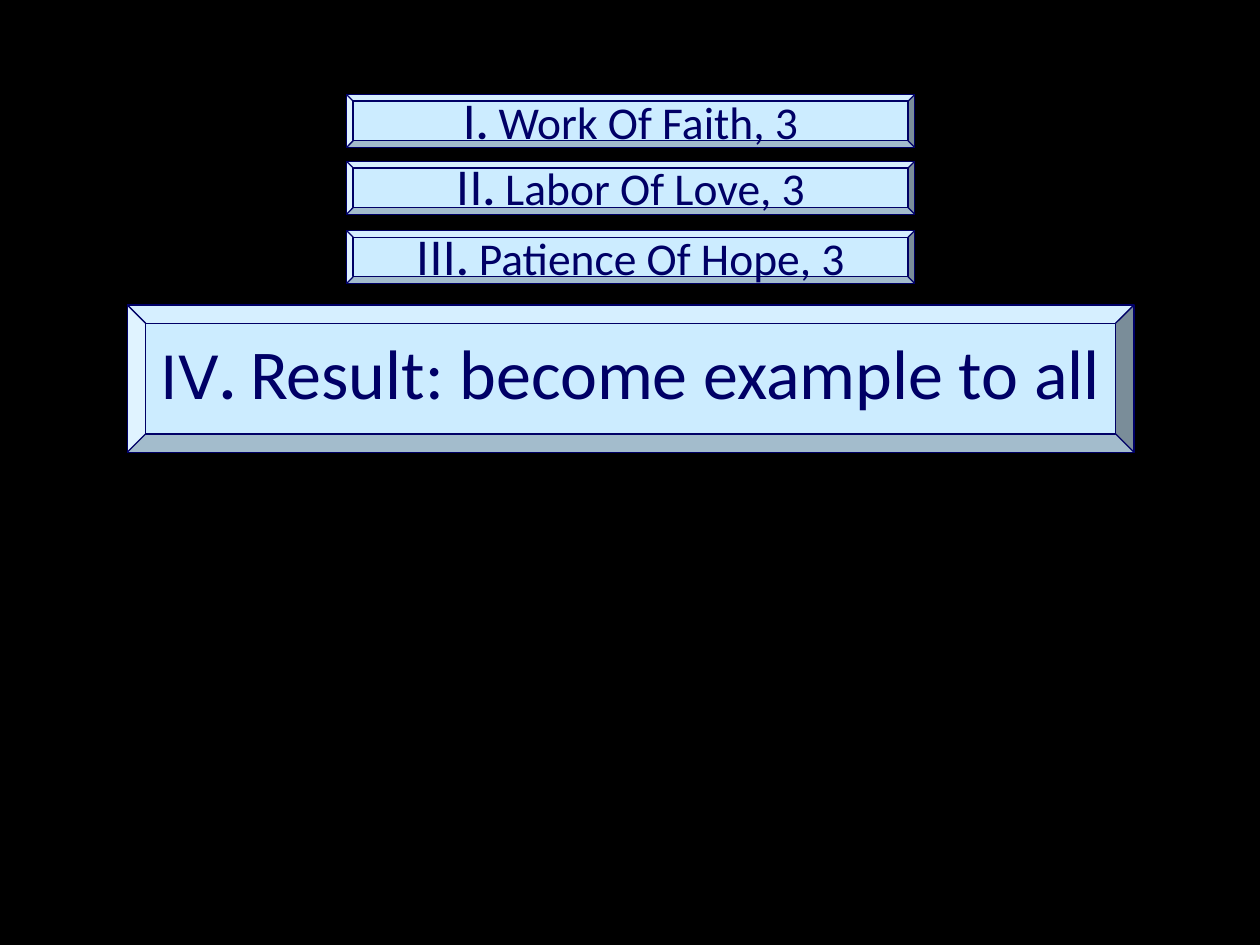
from dataclasses import dataclass

from pptx import Presentation, util as u
from pptx.dml.color import RGBColor
from pptx.enum import shapes, text


@dataclass(frozen=True)
class Theme:
    background: str = "000000"
    panel: str = "CCECFF"
    ink: str = "000066"
    numeral_font: str = "DejaVu Sans"
    body_font: str = "Calibri"
    line_width: float = 0.75
    point_sizes: tuple = (26, 26, 26)  # numeral, dot, wording
    result_sizes: tuple = (34, 36, 40)


def add_run(paragraph, words, *, font, size, color, bold=None):
    run = paragraph.add_run()
    run.text = words
    run.font.name = font
    run.font.size = u.Pt(size)
    run.font.bold = bold
    run.font.color.rgb = RGBColor.from_string(color)


class OutlineSlide:
    def __init__(self, deck, theme):
        self.theme = theme
        self.slide = deck.slides.add_slide(deck.slide_layouts[6])
        backdrop = self.slide.background.fill
        backdrop.solid()
        backdrop.fore_color.rgb = RGBColor.from_string(theme.background)

    def bevel(self, box, numeral, wording, sizes, anchor):
        """Add a bevelled bar with a numbered heading."""
        theme = self.theme
        bar = self.slide.shapes.add_shape(
            shapes.MSO_SHAPE.BEVEL, *map(u.Inches, box))
        bar.adjustments[0] = 0.125
        bar.shadow.inherit = False
        bar.fill.solid()
        bar.fill.fore_color.rgb = RGBColor.from_string(theme.panel)
        bar.line.color.rgb = RGBColor.from_string(theme.ink)
        bar.line.width = u.Pt(theme.line_width)

        frame = bar.text_frame
        frame.word_wrap = False
        frame.vertical_anchor = anchor
        heading = frame.paragraphs[0]
        heading.alignment = text.PP_ALIGN.CENTER
        numeral_size, dot_size, wording_size = sizes
        add_run(heading, numeral, font=theme.numeral_font,
                size=numeral_size, color=theme.ink)
        add_run(heading, ". ", font=theme.body_font,
                size=dot_size, color=theme.ink, bold=True)
        add_run(heading, wording, font=theme.body_font,
                size=wording_size, color=theme.ink, bold=False)


def main():
    deck = Presentation()
    deck.slide_width, deck.slide_height = u.Inches(10), u.Inches(7.5)
    theme = Theme()
    outline = OutlineSlide(deck, theme)

    # Points already covered
    points = [
        (0.75, "I", "Work Of Faith, 3"),
        (1.28, "II", "Labor Of Love, 3"),
        (1.83, "III", "Patience Of Hope, 3"),
    ]
    for top, numeral, wording in points:
        outline.bevel((2.75, top, 4.51, 0.42), numeral, wording,
                      theme.point_sizes, text.MSO_ANCHOR.MIDDLE)

    # Current point, enlarged
    outline.bevel((1.01, 2.42, 7.99, 1.17), "IV",
                  "Result: become example to all",
                  theme.result_sizes, text.MSO_ANCHOR.TOP)

    deck.save("out.pptx")


if __name__ == "__main__":
    main()
